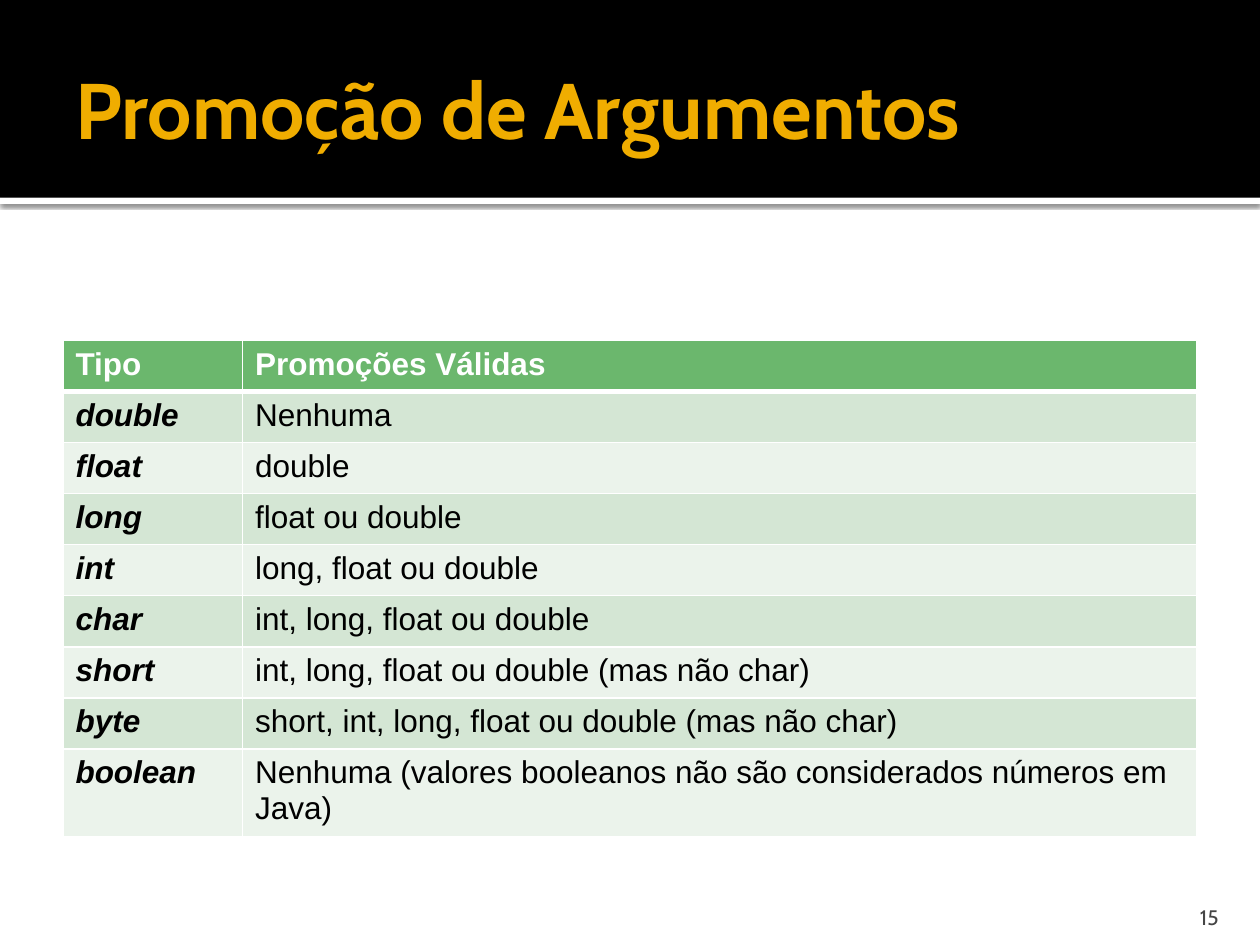
import pptx
import pptx.util
import pptx.dml.color
import pptx.enum.shapes
import pptx.enum.text
import pptx.oxml
import pptx.oxml.ns

Pt = pptx.util.Pt
ALIGN = pptx.enum.text.PP_ALIGN
ANCHOR = pptx.enum.text.MSO_ANCHOR
NAMESPACE = pptx.oxml.ns.nsdecls("a")

PROMOTIONS = [
    ("Tipo", "Promoções Válidas"),
    ("double", "Nenhuma"),
    ("float", "double"),
    ("long", "float ou double"),
    ("int", "long, float ou double"),
    ("char", "int, long, float ou double"),
    ("short", "int, long, float ou double (mas não char)"),
    ("byte", "short, int, long, float ou double (mas não char)"),
    ("boolean", "Nenhuma (valores booleanos não são considerados números em Java)"),
]


def color(value):
    return pptx.dml.color.RGBColor.from_string(value)


def write(frame, text, size=18, font="Arial", fill="000000", bold=False,
          italic=False, align=ALIGN.LEFT):
    para = frame.paragraphs[0]
    para.alignment = align
    span = para.add_run()
    span.text = text
    span.font.size = Pt(size)
    span.font.name = font
    span.font.bold = bold
    span.font.italic = italic
    span.font.color.rgb = color(fill)


def add_text(page, left, top, width, height, text, anchor, margins, **style):
    box = page.shapes.add_textbox(Pt(left), Pt(top), Pt(width), Pt(height))
    frame = box.text_frame
    frame.word_wrap = True
    frame.vertical_anchor = anchor
    (frame.margin_left, frame.margin_top,
     frame.margin_right, frame.margin_bottom) = [Pt(m) for m in margins]
    write(frame, text, **style)


def add_band(page, left, top, width, height, fill):
    band = page.shapes.add_shape(pptx.enum.shapes.MSO_SHAPE.RECTANGLE,
                                 Pt(left), Pt(top), Pt(width), Pt(height))
    band.shadow.inherit = False
    band.fill.solid()
    band.fill.fore_color.rgb = color(fill)
    band.line.fill.background()
    return band


def add_shadow(shape, blur, distance, opacity):
    effects = shape._element.spPr.find(pptx.oxml.ns.qn("a:effectLst"))
    effects.append(pptx.oxml.parse_xml(
        f'<a:outerShdw {NAMESPACE} blurRad="{Pt(blur)}" dist="{Pt(distance)}" '
        f'dir="5400000" algn="tl" rotWithShape="0"><a:srgbClr val="000000">'
        f'<a:alpha val="{opacity * 1000}"/></a:srgbClr></a:outerShdw>'))


def set_borders(cell, widths):
    # Border elements come before the fill in the cell properties
    properties = cell._tc.get_or_add_tcPr()
    for index, (side, width) in enumerate(widths.items()):
        properties.insert(index, pptx.oxml.parse_xml(
            f'<a:ln{side} {NAMESPACE} w="{Pt(width)}"><a:solidFill>'
            f'<a:srgbClr val="FFFFFF"/></a:solidFill></a:ln{side}>'))


def add_header(page, left, top, width, height):
    # White strip with a shadow below the black band
    strip = add_band(page, left, top + height, width, 3.6, "FFFFFF")
    add_shadow(strip, blur=2.5, distance=0.8, opacity=60)
    add_band(page, left, top, width, height, "000000")
    add_text(page, left + 36, top + 12.24, 621.36, 98.64, "Promoção de Argumentos",
             ANCHOR.MIDDLE, (7.2, 3.6, 3.6, 3.6),
             size=45, font="Cabin", fill="F0AD00", bold=True)


def add_promotions(page, left, top, width, height):
    table = page.shapes.add_table(len(PROMOTIONS), 2, Pt(left), Pt(top),
                                  Pt(width), Pt(height)).table
    type_width = 102.6
    table.columns[0].width = Pt(type_width)
    table.columns[1].width = Pt(width - type_width)
    for row, texts in enumerate(PROMOTIONS):
        table.rows[row].height = Pt(height / len(PROMOTIONS))
        header = row == 0
        fill = "6BB76D" if header else ("EBF3EB", "D4E6D4")[row % 2]
        for column, text in enumerate(texts):
            cell = table.cell(row, column)
            cell.fill.solid()
            cell.fill.fore_color.rgb = color(fill)
            set_borders(cell, {"L": 1, "R": 1, "T": 3 if row == 1 else 1,
                               "B": 3 if header else 1})
            write(cell.text_frame, text, fill="FFFFFF" if header else "000000",
                  bold=header or column == 0, italic=not header and column == 0)


def add_page_number(page, left, top, width, height):
    add_text(page, left, top, width, height, "15", ANCHOR.BOTTOM,
             (7.2, 3.6, 7.2, 0), size=12, font="Cabin", fill="454545",
             align=ALIGN.RIGHT)


def main():
    deck = pptx.Presentation()
    deck.slide_width, deck.slide_height = Pt(720), Pt(540)
    page = deck.slides.add_slide(deck.slide_layouts[6])
    add_header(page, 0, 0, 720, 113)
    add_promotions(page, 36, 194.4, 648, 262.8)
    add_page_number(page, 645.84, 509.76, 57.6, 21.6)
    deck.save("out.pptx")


if __name__ == "__main__":
    main()
